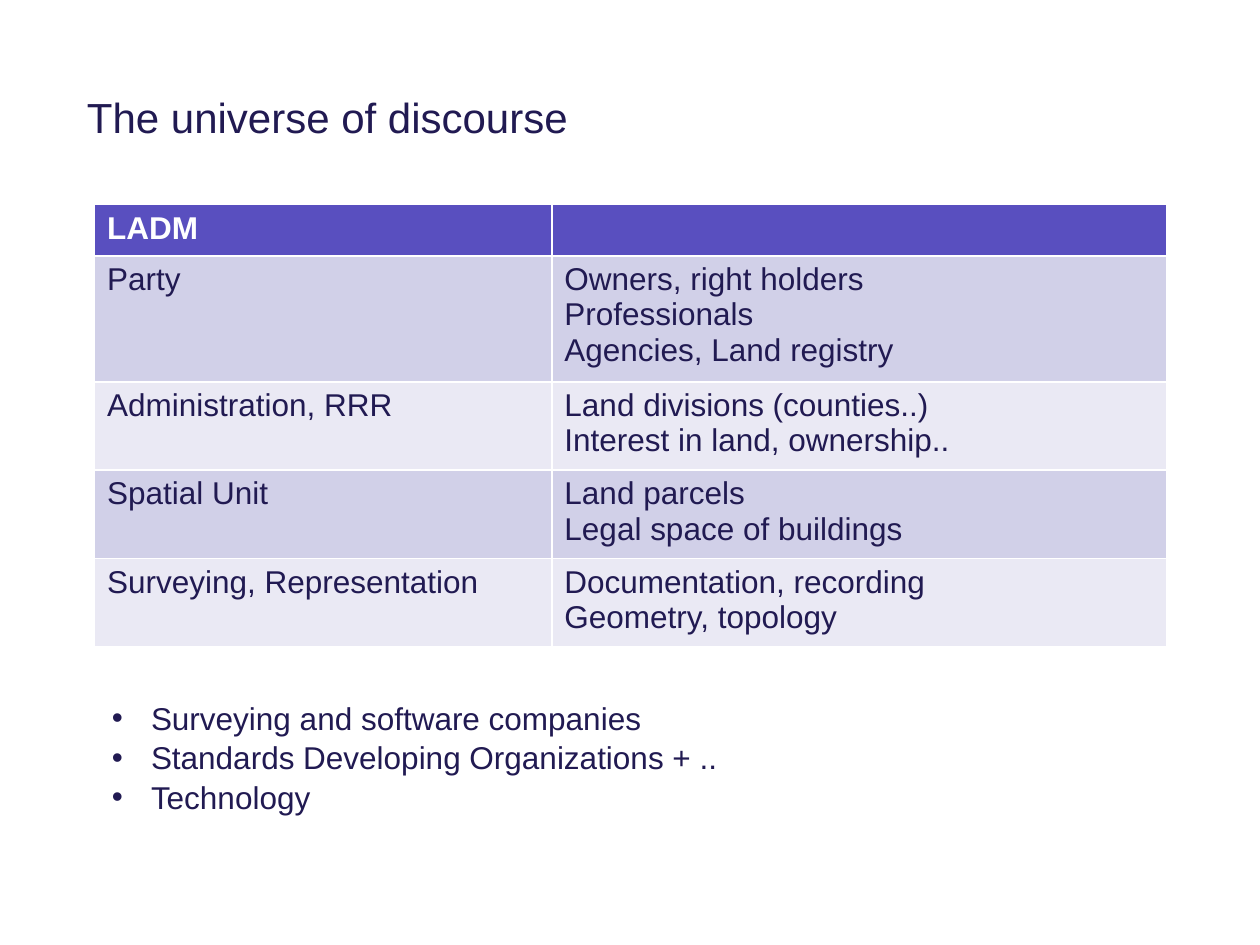
"""Build the slide on the universe of discourse of land administration."""
from dataclasses import dataclass

from lxml import etree
from pptx import Presentation
from pptx.dml.color import RGBColor
from pptx.enum import text
from pptx.oxml import ns
from pptx.util import Inches, Pt

TITLE = "The universe of discourse"
TABLE_ROWS = [
    (["LADM"], []),
    (["Party"], ["Owners, right holders", "Professionals", "Agencies, Land registry"]),
    (["Administration, RRR"], ["Land divisions (counties..)", "Interest in land, ownership.."]),
    (["Spatial Unit"], ["Land parcels", "Legal space of buildings"]),
    (["Surveying, Representation"], ["Documentation, recording", "Geometry, topology"]),
]
COLUMN_WIDTHS = (3.63, 4.88)
BULLETS = [
    "Surveying and software companies",
    "Standards Developing Organizations + ..",
    "Technology",
]


@dataclass(frozen=True)
class Theme:
    font: str = "Arial"
    title_size: int = 24
    body_size: int = 18
    ink: str = "211A52"
    header_ink: str = "FFFFFF"
    header_fill: str = "594FBF"
    band_fills: tuple = ("EAE9F4", "D1D0E8")


THEME = Theme()


def add_lines(frame, lines, size=THEME.body_size, color=THEME.ink, bold=False):
    for index, line in enumerate(lines):
        paragraph = frame.paragraphs[0] if index == 0 else frame.add_paragraph()
        run = paragraph.add_run()
        run.text = line
        run.font.name = THEME.font
        run.font.size = Pt(size)
        run.font.bold = bold
        run.font.color.rgb = RGBColor.from_string(color)


def add_text_box(slide, left, top, width, height):
    frame = slide.shapes.add_textbox(*map(Inches, (left, top, width, height))).text_frame
    frame.word_wrap = True
    return frame


def add_title(slide):
    frame = add_text_box(slide, 0.5, 0.3, 9, 1.25)
    frame.vertical_anchor = text.MSO_ANCHOR.MIDDLE
    frame.margin_left = Inches(0.19)
    add_lines(frame, [TITLE], THEME.title_size)


def add_table(slide):
    heights = [max(0.41, 0.1 + 0.28 * max(map(len, row))) for row in TABLE_ROWS]
    table = slide.shapes.add_table(
        len(TABLE_ROWS), len(COLUMN_WIDTHS), Inches(0.75), Inches(1.62),
        Inches(sum(COLUMN_WIDTHS)), Inches(sum(heights)),
    ).table
    for column, width in zip(table.columns, COLUMN_WIDTHS):
        column.width = Inches(width)
    for row_index, (row, height) in enumerate(zip(TABLE_ROWS, heights)):
        table.rows[row_index].height = Inches(height)
        header = row_index == 0
        fill = THEME.header_fill if header else THEME.band_fills[row_index % 2]
        color = THEME.header_ink if header else THEME.ink
        for column_index, lines in enumerate(row):
            cell = table.cell(row_index, column_index)
            cell.fill.solid()
            cell.fill.fore_color.rgb = RGBColor.from_string(fill)
            add_lines(cell.text_frame, lines, color=color, bold=header)


def add_bullets(slide):
    frame = add_text_box(slide, 0.51, 5.48, 5.51, 1.01)
    frame.auto_size = text.MSO_AUTO_SIZE.SHAPE_TO_FIT_TEXT
    add_lines(frame, BULLETS)
    for paragraph in frame.paragraphs:
        properties = paragraph._p.get_or_add_pPr()
        properties.set("marL", str(Inches(0.59)))
        properties.set("indent", str(Inches(-0.31)))
        etree.SubElement(properties, ns.qn("a:buFont"), typeface=THEME.font)
        etree.SubElement(properties, ns.qn("a:buChar"), char="•")
        paragraph.line_spacing = 1.05


def main():
    presentation = Presentation()
    presentation.slide_width = Inches(10)
    presentation.slide_height = Inches(7.5)
    slide = presentation.slides.add_slide(presentation.slide_layouts[6])
    add_title(slide)
    add_table(slide)
    add_bullets(slide)
    presentation.save("out.pptx")


if __name__ == "__main__":
    main()
